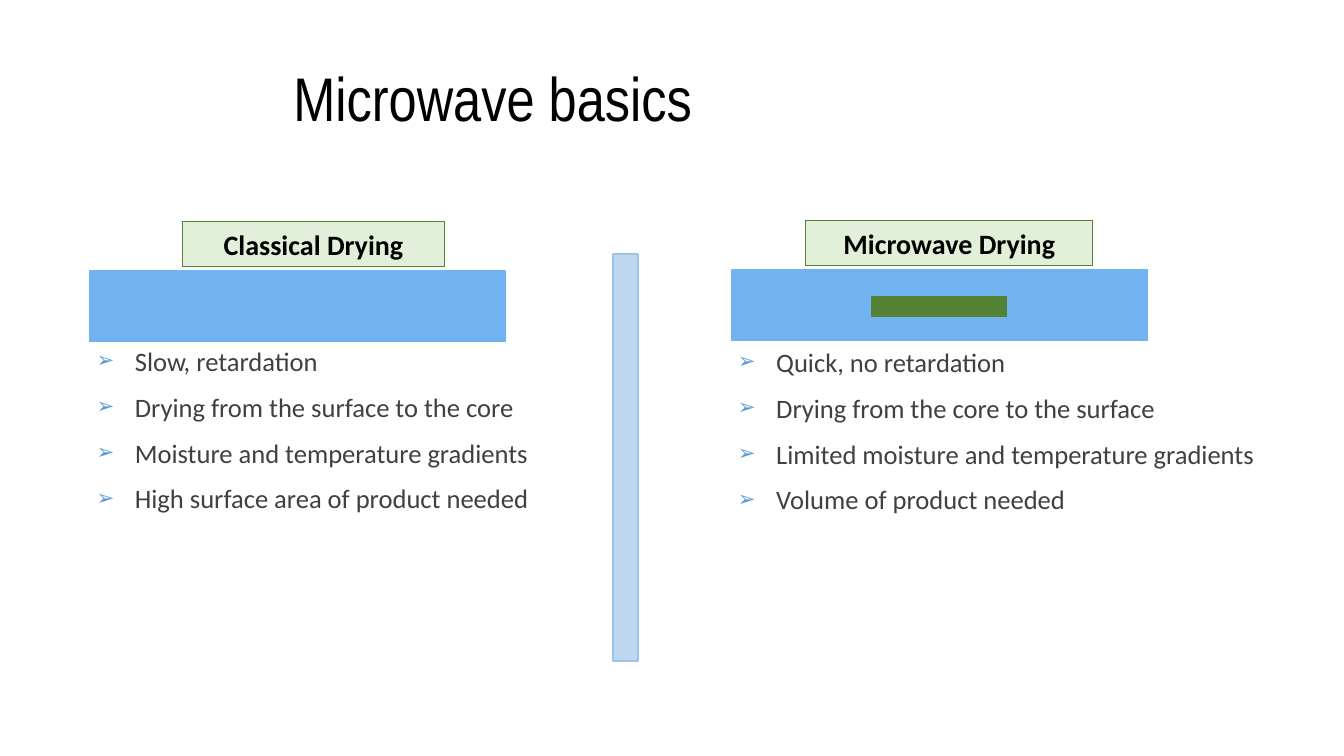
"""Build the slide comparing classical drying with microwave drying."""
from lxml.etree import SubElement
from pptx import Presentation
from pptx.dml.color import RGBColor
from pptx.enum.shapes import MSO_SHAPE as Preset
from pptx.enum.text import MSO_ANCHOR as Anchor, MSO_AUTO_SIZE as AutoSize, PP_ALIGN as Align
from pptx.oxml.ns import qn
from pptx.util import Inches, Pt

HEADING = {"name": "Calibri", "size": Pt(20), "bold": True}
BULLET = {"name": "Calibri", "size": Pt(19)}
TITLE = {"name": "Arial Narrow", "size": Pt(44)}


def add_box(place, fill, line, width=1):
    shape = slide.shapes.add_shape(Preset.RECTANGLE, *map(Inches, place))
    shape.shadow.inherit = False
    shape.fill.solid()
    shape.fill.fore_color.rgb = RGBColor.from_string(fill)
    shape.line.color.rgb = RGBColor.from_string(line)
    shape.line.width = Pt(width)
    return shape


def write(paragraph, text, color, formats):
    paragraph.text = text
    paragraph.font.color.rgb = RGBColor.from_string(color)
    for name, value in formats.items():
        setattr(paragraph.font, name, value)


presentation = Presentation()
presentation.slide_width = Inches(13.33)
presentation.slide_height = Inches(7.5)
slide = presentation.slides.add_slide(presentation.slide_layouts[5])

title = slide.shapes.title
title.left, title.top, title.width, title.height = map(Inches, (2.81, 0.28, 9.5, 1.45))
title.text_frame.auto_size = AutoSize.NONE
title.text_frame.vertical_anchor = Anchor.MIDDLE
title_paragraph = title.text_frame.paragraphs[0]
title_paragraph.alignment = Align.LEFT
title_paragraph.line_spacing = 0.9
write(title_paragraph, "Microwave basics", "000000", TITLE)

add_box((6.08, 2.52, 0.25, 4.04), "BDD7EE", "9DC3E6")

columns = [
    ("Classical Drying", (1.81, 2.2, 2.6, 0.44), (0.89, 2.69, 4.12, 0.7), (0.86, 3.37, 5.46, 2.26),
     ["Slow, retardation", "Drying from the surface to the core",
      "Moisture and temperature gradients", "High surface area of product needed"]),
    ("Microwave Drying", (7.99, 2.19, 2.85, 0.44), (7.26, 2.68, 4.12, 0.7), (7.22, 3.38, 5.98, 1.8),
     ["Quick, no retardation", "Drying from the core to the surface",
      "Limited moisture and temperature gradients", "Volume of product needed"]),
]
for heading, heading_place, product_place, list_place, points in columns:
    heading_box = add_box(heading_place, "E2F0D9", "548235", 0.75)
    heading_box.text_frame.vertical_anchor = Anchor.MIDDLE
    heading_paragraph = heading_box.text_frame.paragraphs[0]
    heading_paragraph.alignment = Align.CENTER
    write(heading_paragraph, heading, "000000", HEADING)

    add_box(product_place, "70B3F0", "70B3F0")

    text_frame = slide.shapes.add_textbox(*map(Inches, list_place)).text_frame
    text_frame.word_wrap = True
    for index, point in enumerate(points):
        paragraph = text_frame.add_paragraph() if index else text_frame.paragraphs[0]
        properties = paragraph._p.get_or_add_pPr()
        properties.set("marL", str(Inches(0.38)))
        properties.set("indent", str(-Inches(0.38)))
        bullet_color = SubElement(properties, qn("a:buClr"))
        SubElement(bullet_color, qn("a:srgbClr"), val="5B9BD5")
        SubElement(properties, qn("a:buSzPct"), val="80000")
        SubElement(properties, qn("a:buFont"), typeface="Arial")
        SubElement(properties, qn("a:buChar"), char="➢")
        paragraph.space_before = Pt(10 if index else 0)
        write(paragraph, point, "404040", BULLET)

add_box((8.65, 2.94, 1.33, 0.2), "548235", "548235")

presentation.save("out.pptx")
